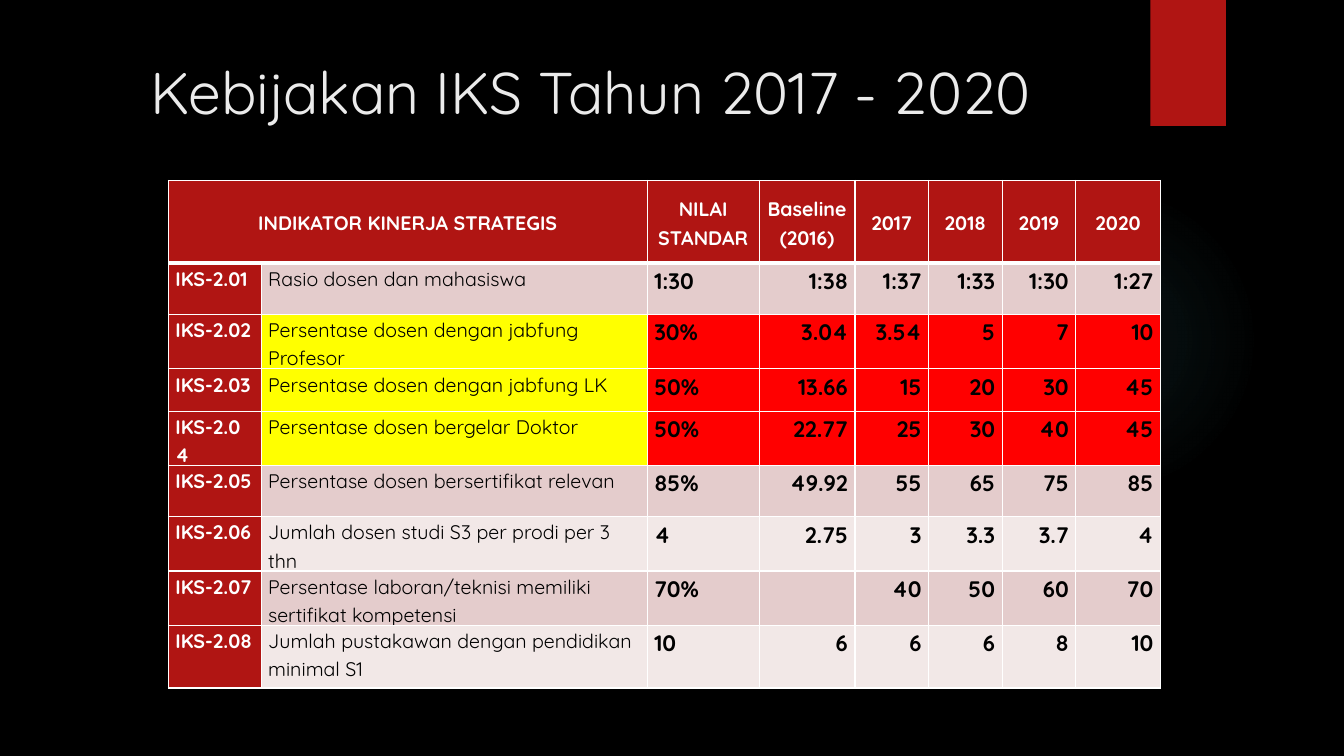
from lxml import etree
from pptx import Presentation
from pptx.dml.color import RGBColor
from pptx.enum.shapes import MSO_SHAPE
from pptx.enum.text import MSO_ANCHOR, PP_ALIGN
from pptx.oxml import parse_xml
from pptx.oxml.ns import nsdecls, qn
from pptx.util import Inches, Pt

LEFT, CENTER, RIGHT = PP_ALIGN.LEFT, PP_ALIGN.CENTER, PP_ALIGN.RIGHT
TOP, MIDDLE = MSO_ANCHOR.TOP, MSO_ANCHOR.MIDDLE
OVAL, RECTANGLE = MSO_SHAPE.OVAL, MSO_SHAPE.RECTANGLE

BLACK = RGBColor(0x00, 0x00, 0x00)
WHITE = RGBColor(0xFF, 0xFF, 0xFF)
TITLE_GREY = RGBColor(0xEB, 0xEB, 0xEB)
BRICK = RGBColor(0xB0, 0x15, 0x13)
RED = RGBColor(0xFF, 0x00, 0x00)
YELLOW = RGBColor(0xFF, 0xFF, 0x00)
BAND_DARK = RGBColor(0xE4, 0xCC, 0xCC)
BAND_LIGHT = RGBColor(0xF2, 0xE8, 0xE7)
GLOW = RGBColor(0x50, 0xB9, 0xC1)
GLOW_STOPS = [(0, 7), (36, 6), (69, 0)]

FONT = "Quicksand"
COLUMNS = [0.92, 3.83, 1.11, 0.95, 0.73, 0.73, 0.73, 0.84]
ROWS = [0.82, 0.51, 0.54, 0.42, 0.51, 0.51, 0.54, 0.54, 0.62]
HEADINGS = ["INDIKATOR KINERJA STRATEGIS", "", "NILAI STANDAR", "Baseline (2016)",
            "2017", "2018", "2019", "2020"]
INDICATORS = [
    ["Rasio dosen dan mahasiswa", "1:30", "1:38", "1:37", "1:33", "1:30", "1:27"],
    ["Persentase dosen dengan jabfung Profesor", "30%", "3.04", "3.54", "5", "7", "10"],
    ["Persentase dosen dengan jabfung LK", "50%", "13.66", "15", "20", "30", "45"],
    ["Persentase dosen bergelar Doktor", "50%", "22.77", "25", "30", "40", "45"],
    ["Persentase dosen bersertifikat relevan", "85%", "49.92", "55", "65", "75", "85"],
    ["Jumlah dosen studi S3 per prodi per 3 thn", "4", "2.75", "3", "3.3", "3.7", "4"],
    ["Persentase laboran/teknisi memiliki sertifikat kompetensi",
     "70%", "", "40", "50", "60", "70"],
    ["Jumlah pustakawan dengan pendidikan minimal S1", "10", "6", "6", "6", "8", "10"],
]
HIGHLIGHTED = {2, 3, 4}


def write(frame, text, size, color, align, bold=False):
    """Fill a text frame with one formatted paragraph."""
    frame.text = text
    para = frame.paragraphs[0]
    para.alignment = align
    para.font.size = Pt(size)
    for span in para.runs:
        span.font.name = FONT
        span.font.size = Pt(size)
        span.font.bold = bold
        span.font.color.rgb = color
    return para


def add_plain_shape(page, kind, box, color):
    """Add a flat shape without outline or shadow."""
    shape = page.shapes.add_shape(kind, *map(Inches, box))
    shape.shadow.inherit = False
    shape.fill.solid()
    shape.fill.fore_color.rgb = color
    shape.line.fill.background()
    return shape


def add_glow(page, box):
    """Add the faint round glow with a fading radial gradient."""
    properties = add_plain_shape(page, OVAL, box, GLOW).fill._xPr
    stops = "".join(
        f'<a:gs pos="{place * 1000}"><a:srgbClr val="{GLOW}">'
        f'<a:alpha val="{alpha * 1000}"/></a:srgbClr></a:gs>'
        for place, alpha in GLOW_STOPS)
    gradient = parse_xml(
        f'<a:gradFill {nsdecls("a")}><a:gsLst>{stops}</a:gsLst><a:path path="circle">'
        '<a:fillToRect l="50000" t="50000" r="50000" b="50000"/></a:path></a:gradFill>')
    properties.replace(properties.find(qn("a:solidFill")), gradient)


def add_title(page, box):
    """Add the centred slide title."""
    frame = page.shapes.add_textbox(*map(Inches, box)).text_frame
    frame.word_wrap = True
    frame.vertical_anchor = TOP
    write(frame, "Kebijakan IKS Tahun 2017 - 2020", 42, TITLE_GREY, CENTER)


def set_borders(cell, widths):
    """Draw white cell borders, given widths by side letter."""
    properties = cell._tc.get_or_add_tcPr()
    for index, (side, width) in enumerate(widths.items()):
        line = etree.Element(qn(f"a:ln{side}"), w=str(Pt(width)))
        fill = etree.SubElement(line, qn("a:solidFill"))
        etree.SubElement(fill, qn("a:srgbClr"), val=str(WHITE))
        properties.insert(index, line)


def cell_look(row, column):
    """Return fill, text colour, size, alignment and boldness of a cell."""
    if row == 0:
        return BRICK, WHITE, 14, CENTER, True
    if column == 0:
        return BRICK, WHITE, 14, LEFT, True
    band = BAND_DARK if row % 2 else BAND_LIGHT
    if column == 1:
        return YELLOW if row in HIGHLIGHTED else band, BLACK, 14, LEFT, False
    align = LEFT if column == 2 else RIGHT
    return RED if row in HIGHLIGHTED else band, BLACK, 16, align, True


def add_indicator_table(page, left, top):
    """Add the indicator table with its heading row."""
    table = page.shapes.add_table(
        len(ROWS), len(COLUMNS), Inches(left), Inches(top),
        Inches(sum(COLUMNS)), Inches(sum(ROWS))).table
    table.horz_banding = False
    for column, width in zip(table.columns, COLUMNS):
        column.width = Inches(width)
    for row, height in zip(table.rows, ROWS):
        row.height = Inches(height)
    records = [HEADINGS] + [[f"IKS-2.{number:02}", *values]
                            for number, values in enumerate(INDICATORS, 1)]
    for row, record in enumerate(records):
        for column, text in enumerate(record):
            cell = table.cell(row, column)
            fill, color, size, align, bold = cell_look(row, column)
            cell.fill.solid()
            cell.fill.fore_color.rgb = fill
            cell.margin_left = cell.margin_right = Inches(0.07)
            cell.margin_top = cell.margin_bottom = 0
            cell.vertical_anchor = TOP if row else MIDDLE
            para = write(cell.text_frame, text, size, color, align, bold)
            para.line_spacing = 1.15
            set_borders(cell, {"L": 1, "R": 1, "T": 3 if row == 1 else 1,
                               "B": 1 if row else 3})
    table.cell(0, 0).merge(table.cell(0, 1))


def build_slide(deck):
    """Build the policy slide."""
    page = deck.slides.add_slide(deck.slide_layouts[6])
    page.background.fill.solid()
    page.background.fill.fore_color.rgb = BLACK
    add_glow(page, (9.41, 1.83, 3.08, 3.08))
    add_plain_shape(page, RECTANGLE, (11.41, 0, 0.75, 1.25), BRICK)
    add_title(page, (0.71, 0.5, 10.29, 1.53))
    add_indicator_table(page, 1.67, 1.79)


def main():
    """Create and save the deck."""
    deck = Presentation()
    deck.slide_width, deck.slide_height = Inches(13.33), Inches(7.5)
    build_slide(deck)
    deck.save("out.pptx")


if __name__ == "__main__":
    main()
